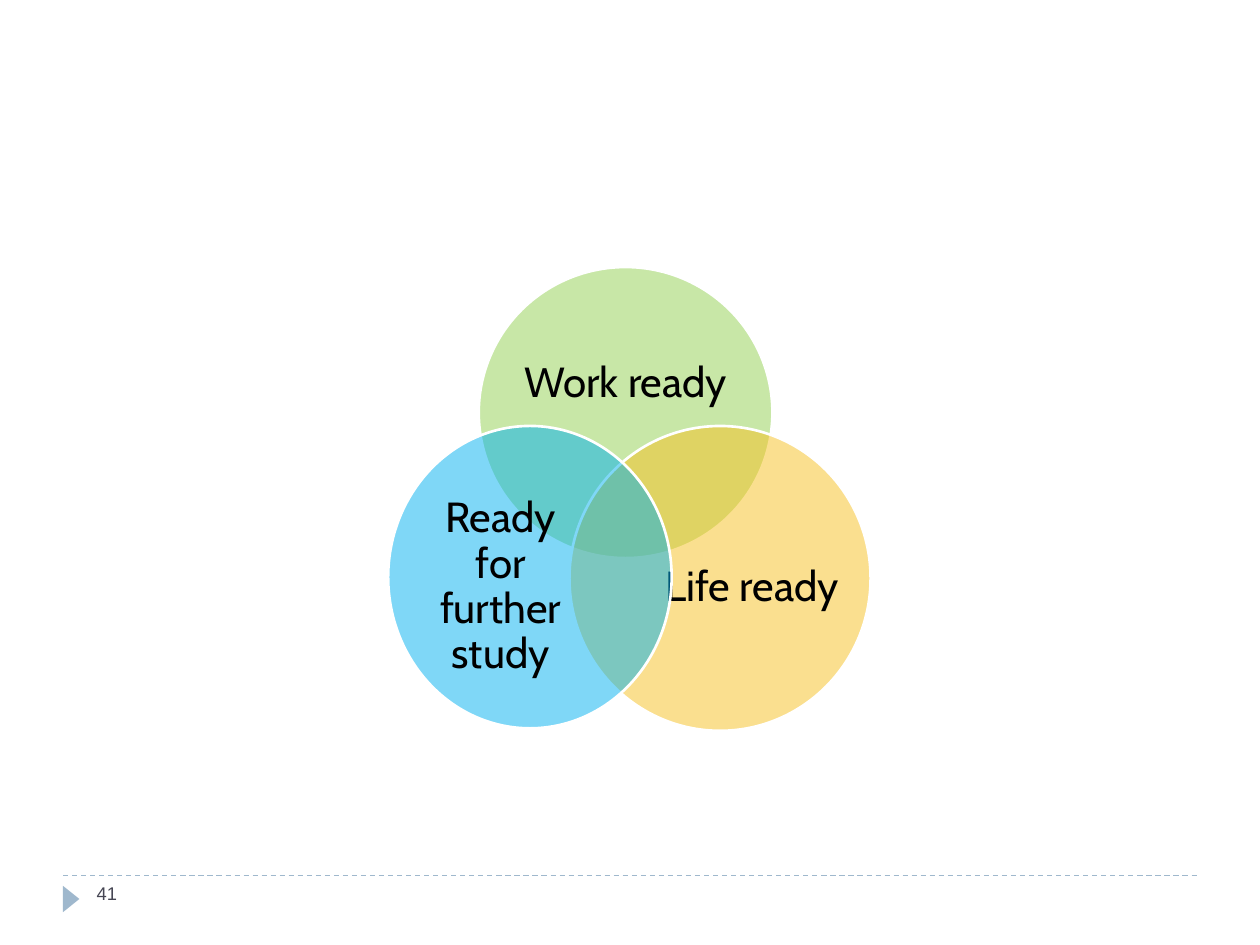
from lxml.etree import SubElement
from pptx import Presentation
from pptx.dml.color import RGBColor
from pptx.enum.dml import MSO_LINE
from pptx.enum.shapes import MSO_CONNECTOR, MSO_SHAPE
from pptx.enum.text import MSO_ANCHOR, PP_ALIGN
from pptx.oxml.ns import qn
from pptx.util import Pt

CIRCLES = [
    ("Work ready", "92D050", (273.6, 152.6, 167.8, 166.3), (295.9, 182.2, 123.1, 74.9)),
    ("Life ready", "F7C120", (325.4, 243.4, 172.1, 174.2), (378, 288, 103.7, 95.8)),
    ("Ready for further study", "00B0F0", (221.8, 243.4, 162, 172.8), (237.6, 288, 97, 95)),
]
PAGE_NUMBER = "41"
ACCENT = "9FB8CD"
LABEL = {"name": "Cabin", "size": Pt(24)}
FOOTER = {"name": "Arial", "size": Pt(10.5)}
CENTRED = {"alignment": PP_ALIGN.CENTER, "line_spacing": 0.9}
MIDDLE = {"vertical_anchor": MSO_ANCHOR.MIDDLE, "margin_left": 0, "margin_top": 0,
          "margin_right": 0, "margin_bottom": 0}


def rgb(value):
    return RGBColor.from_string(value)


def apply(target, values):
    for name, value in values.items():
        setattr(target, name, value)


def add_shape(s, kind, box, color, alpha=None):
    sp = s.shapes.add_shape(kind, *map(Pt, box))
    sp.shadow.inherit = False
    sp.fill.solid()
    sp.fill.fore_color.rgb = rgb(color)
    if alpha is not None:
        clr = sp.fill._xPr.find(".//" + qn("a:srgbClr"))
        SubElement(clr, qn("a:alpha"), val=str(alpha * 1000))
    return sp


def add_text(s, text, box, font, color, frame={}, para={}):
    tf = s.shapes.add_textbox(*map(Pt, box)).text_frame
    tf.word_wrap = True
    apply(tf, frame)
    p = tf.paragraphs[0]
    apply(p, para)
    r = p.add_run()
    r.text = text
    apply(r.font, font)
    r.font.color.rgb = rgb(color)


def add_footer(s):
    rule = s.shapes.add_connector(MSO_CONNECTOR.STRAIGHT, Pt(36), Pt(500.4), Pt(684), Pt(500.4))
    rule.line.color.rgb = rgb(ACCENT)
    apply(rule.line, {"width": Pt(0.75), "dash_style": MSO_LINE.DASH})
    SubElement(rule._element.spPr, qn("a:effectLst"))
    marker = add_shape(s, MSO_SHAPE.ISOSCELES_TRIANGLE, (33.1, 509, 15.1, 9.4), ACCENT)
    marker.rotation = 90
    marker.line.fill.background()


def main():
    prs = Presentation()
    apply(prs, {"slide_width": Pt(720), "slide_height": Pt(540)})
    s = prs.slides.add_slide(prs.slide_layouts[6])
    add_footer(s)
    for text, color, circle, label in CIRCLES:
        sp = add_shape(s, MSO_SHAPE.OVAL, circle, color, alpha=50)
        sp.line.color.rgb = rgb("FFFFFF")
        sp.line.width = Pt(1.5)
        add_text(s, text, label, LABEL, "000000", MIDDLE, CENTRED)
    add_text(s, PAGE_NUMBER, (48.2, 500.4, 156.2, 28.8), FOOTER, "464653")
    prs.save("out.pptx")


if __name__ == "__main__":
    main()
